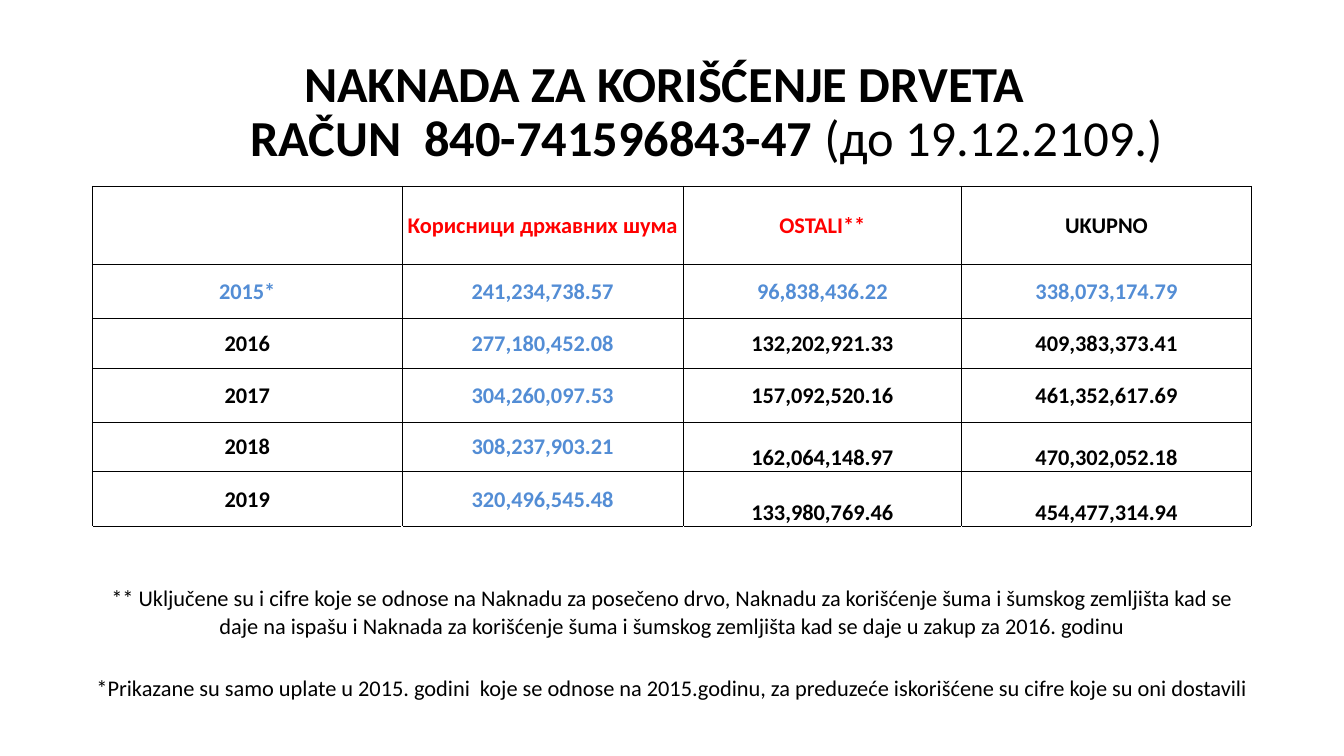
from lxml import etree
from pptx import Presentation
from pptx.dml.color import RGBColor
from pptx.enum import text as t
from pptx.oxml import ns
from pptx.util import Cm, Pt

BLACK = RGBColor(0x00, 0x00, 0x00)
RED = RGBColor(0xFF, 0x00, 0x00)
BLUE = RGBColor(0x53, 0x8D, 0xD5)
MIDDLE, BOTTOM = t.MSO_ANCHOR.MIDDLE, t.MSO_ANCHOR.BOTTOM


def style_run(run, size, color, bold):
    for name, value in {"name": "Calibri", "size": Pt(size), "bold": bold}.items():
        setattr(run.font, name, value)
    run.font.color.rgb = color


def add_border(cell, side, points):
    line = etree.SubElement(cell._tc.get_or_add_tcPr(), ns.qn(f"a:ln{side}"), w=str(Pt(points)))
    fill = etree.SubElement(line, ns.qn("a:solidFill"))
    etree.SubElement(fill, ns.qn("a:srgbClr"), val=str(BLACK))


deck = Presentation()
deck.slide_width, deck.slide_height = Cm(33.87), Cm(19.05)
slide = deck.slides.add_slide(deck.slide_layouts[5])

# Title: each line has its own indent
title = slide.shapes.title
title_box = {"left": Cm(2.33), "top": Cm(1.01), "width": Cm(29.21), "height": Cm(3.68)}
for name, value in title_box.items():
    setattr(title, name, value)
heading = title.text_frame
heading.word_wrap = True
heading.auto_size = t.MSO_AUTO_SIZE.NONE
heading.vertical_anchor = MIDDLE
title_lines = [
    (5.08, [("NAKNADA ZA KORIŠĆENJE DRVETA", True)]),
    (3.73, [("RAČUN  840-741596843-47 ", True), ("(до 19.12.2109.)", False)]),
]
for index, (indent, parts) in enumerate(title_lines):
    line = heading.paragraphs[0] if index == 0 else heading.add_paragraph()
    line.alignment = t.PP_ALIGN.LEFT
    line.line_spacing = 0.9
    line.space_before = Pt(0)
    line._p.get_or_add_pPr().set("marL", str(Cm(indent)))
    for words, bold in parts:
        run = line.add_run()
        run.text = words
        style_run(run, 36, BLACK, bold)

# Payments per year, followed by a spacer row and two merged note rows
payments = [
    ["", "Корисници државних шума", "OSTALI**", "UKUPNO"],
    ["2015*", "241,234,738.57", "96,838,436.22", "338,073,174.79"],
    ["2016", "277,180,452.08", "132,202,921.33", "409,383,373.41"],
    ["2017", "304,260,097.53", "157,092,520.16", "461,352,617.69"],
    ["2018", "308,237,903.21", "162,064,148.97", "470,302,052.18"],
    ["2019", "320,496,545.48", "133,980,769.46", "454,477,314.94"],
]
notes = [
    "** Uključene su i cifre koje se odnose na Naknadu za posečeno drvo, Naknadu za "
    "korišćenje šuma i šumskog zemljišta kad se daje na ispašu i Naknada za korišćenje "
    "šuma i šumskog zemljišta kad se daje u zakup za 2016. godinu",
    "*Prikazane su samo uplate u 2015. godini  koje se odnose na 2015.godinu, za "
    "preduzeće iskorišćene su cifre koje su oni dostavili",
]
rows = payments + [[""] * 4] + [[note, "", "", ""] for note in notes]
column_widths = [7.8, 7.09, 7.01, 7.31]
row_heights = [1.96, 1.35, 1.27, 1.35, 1.24, 1.4, 0.91, 2.49, 1.35]
last_year, last_column = len(payments) - 1, len(column_widths) - 1

table = slide.shapes.add_table(
    len(rows), len(column_widths), Cm(2.33), Cm(4.7),
    Cm(sum(column_widths)), Cm(sum(row_heights))).table
table.first_row = table.horz_banding = False
for column, width in zip(table.columns, column_widths):
    column.width = Cm(width)
for row, height in zip(table.rows, row_heights):
    row.height = Cm(height)
for r in range(last_year + 2, len(rows)):
    table.cell(r, 0).merge(table.cell(r, last_column))

cell_format = {"margin_left": Cm(0.03), "margin_right": Cm(0.03),
               "margin_top": Cm(0.03), "margin_bottom": Cm(0)}
for r, values in enumerate(rows):
    for c, value in enumerate(values):
        cell = table.cell(r, c)
        for name, setting in cell_format.items():
            setattr(cell, name, setting)
        cell.vertical_anchor = BOTTOM if r in (4, 5) and c >= 2 else MIDDLE
        if r <= last_year:
            add_border(cell, "L", 1 if c == 0 else 0.5)
            add_border(cell, "R", 1 if c == last_column else 0.5)
            add_border(cell, "T", 1 if r == 0 else 0.5)
            add_border(cell, "B", 0.5)
        elif r == last_year + 1:
            add_border(cell, "T", 0.5)
        cell.fill.background()

        paragraph = cell.text_frame.paragraphs[0]
        paragraph.alignment = t.PP_ALIGN.CENTER
        paragraph.font.size = Pt(16)
        if value:
            if r == 0:
                color = RED if c < last_column else BLACK
            else:
                color = BLUE if r == 1 or (c == 1 and r <= last_year) else BLACK
            run = paragraph.add_run()
            run.text = value
            style_run(run, 16, color, r <= last_year)

deck.save("out.pptx")
